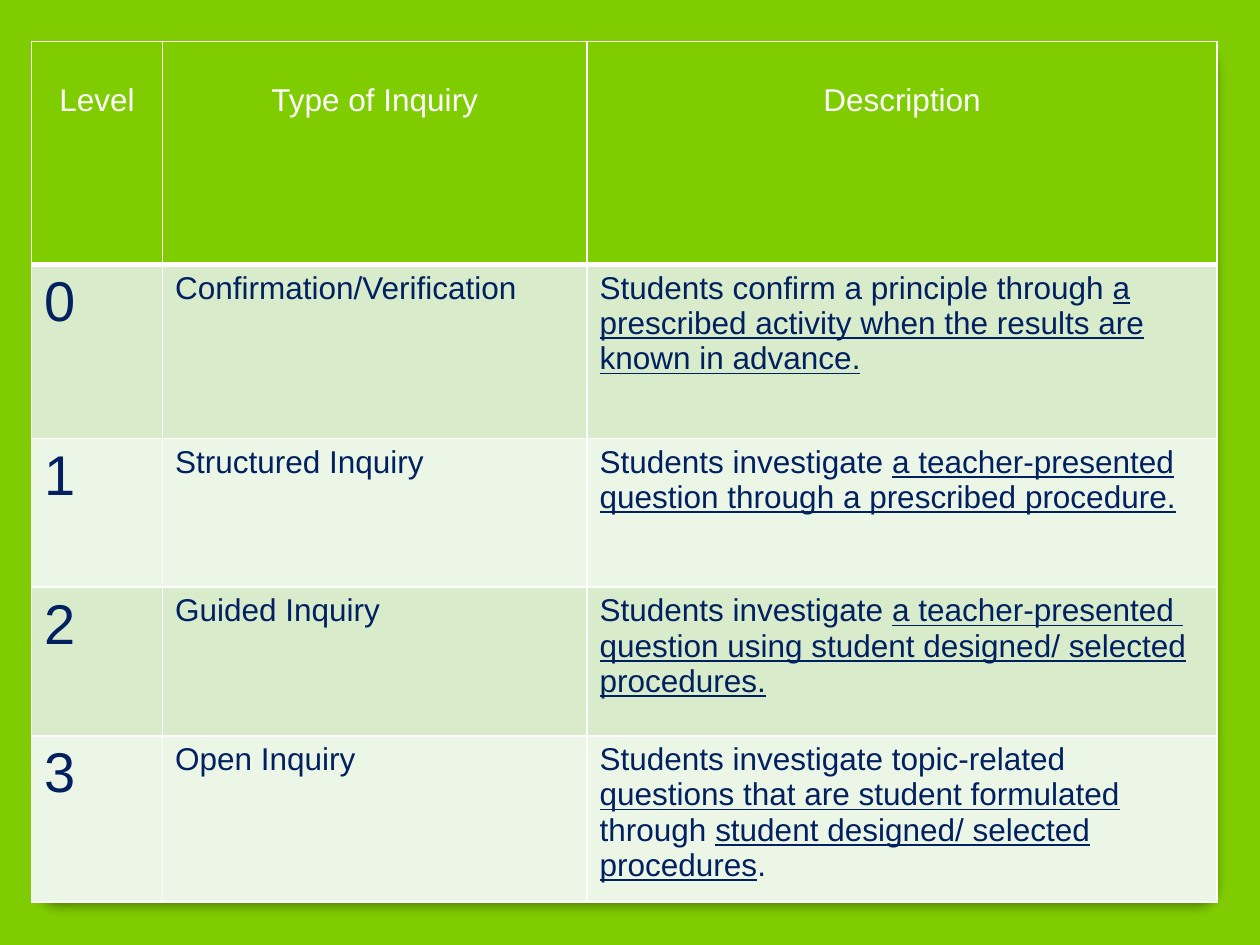
from lxml.etree import SubElement
from pptx import Presentation
from pptx.dml.color import RGBColor
from pptx.enum.shapes import MSO_SHAPE as Shape
from pptx.enum.text import PP_ALIGN as Align
from pptx.oxml.ns import qn
from pptx.util import Inches, Pt

COLORS = {
    "green": "7FCC00",
    "white": "FFFFFF",
    "edge": "A4A4A4",
    "shadow": "000000",
    "navy": "002060",
    "dark band": "D8ECCC",
    "light band": "ECF6E7",
}
FONT = "Arial"
COLUMN_WIDTHS = [1.04, 3.37, 5]
ROW_HEIGHTS = [1.77, 1.38, 1.18, 1.18, 1.32]
HEADINGS = ["Level", "Type of Inquiry", "Description"]
LEVELS = [
    ("Confirmation/Verification",
     ["Students confirm a principle through ",
      "a prescribed activity when the results are known in advance."]),
    ("Structured Inquiry",
     ["Students investigate ",
      "a teacher-presented question through a prescribed procedure."]),
    ("Guided Inquiry",
     ["Students investigate ",
      "a teacher-presented  question using student designed/ selected procedures."]),
    ("Open Inquiry",
     ["Students investigate topic-related ",
      "questions that are student formulated",
      " through ",
      "student designed/ selected procedures",
      "."]),
]


def color(name):
    """Return the named colour."""
    return RGBColor.from_string(COLORS[name])


def add_solid_fill(parent, name):
    """Append a solid fill element and return its colour element."""
    fill = SubElement(parent, qn("a:solidFill"))
    return SubElement(fill, qn("a:srgbClr"), val=COLORS[name])


def add_panel(slide, left, top, width, height):
    """Place the white rounded panel whose shadow frames the table."""
    panel = slide.shapes.add_shape(Shape.ROUNDED_RECTANGLE, Inches(left), Inches(top),
                                   Inches(width), Inches(height))
    panel.adjustments[0] = 0.02
    panel.fill.solid()
    panel.fill.fore_color.rgb = color("white")
    panel.line.color.rgb = color("edge")
    panel.line.width = Pt(0.16)
    panel.shadow.inherit = False
    effects = panel.element.spPr.find(qn("a:effectLst"))
    shadow = SubElement(effects, qn("a:outerShdw"), blurRad=str(Pt(6)), dist=str(Pt(4)),
                        dir="5400000", algn="ctr", rotWithShape="0")
    shadow_color = SubElement(shadow, qn("a:srgbClr"), val=COLORS["shadow"])
    SubElement(shadow_color, qn("a:alpha"), val="40000")


def format_cell(cell, fill, bottom=1):
    """Give a cell its white borders and its fill."""
    properties = cell._tc.get_or_add_tcPr()
    for side, width in {"L": 1, "R": 1, "T": 1, "B": bottom}.items():
        border = SubElement(properties, qn(f"a:ln{side}"), w=str(Pt(width)))
        add_solid_fill(border, "white")
    cell.fill.solid()
    cell.fill.fore_color.rgb = color(fill)


def write_cell(cell, segments, size, font_color):
    """Write segments as runs, underlining every second one."""
    paragraph = cell.text_frame.paragraphs[0]
    for index, segment in enumerate(segments):
        run = paragraph.add_run()
        run.text = segment
        run.font.name = FONT
        run.font.size = Pt(size)
        run.font.color.rgb = color(font_color)
        run.font.underline = index % 2 == 1
    return paragraph


def add_inquiry_table(slide, left, top):
    """Place the table of inquiry levels."""
    frame = slide.shapes.add_table(len(ROW_HEIGHTS), len(COLUMN_WIDTHS), Inches(left), Inches(top),
                                   Inches(sum(COLUMN_WIDTHS)), Inches(sum(ROW_HEIGHTS)))
    table = frame.table
    table.horz_banding = False
    for column, width in zip(table.columns, COLUMN_WIDTHS):
        column.width = Inches(width)
    for row, height in zip(table.rows, ROW_HEIGHTS):
        row.height = Inches(height)
    for cell, heading in zip(table.rows[0].cells, HEADINGS):
        format_cell(cell, "green", bottom=3)
        cell.margin_top = Inches(0.33)
        paragraph = write_cell(cell, [heading], 18, "white")
        paragraph.alignment = Align.CENTER
        paragraph.runs[0].font.bold = False
    for level, (kind, description) in enumerate(LEVELS):
        contents = [([str(level)], 32), ([kind], 18), (description, 18)]
        for cell, (segments, size) in zip(table.rows[level + 1].cells, contents):
            format_cell(cell, "light band" if level % 2 else "dark band")
            write_cell(cell, segments, size, "navy")


def main():
    """Build and save the slide."""
    presentation = Presentation()
    presentation.slide_width = Inches(10)
    presentation.slide_height = Inches(7.5)
    slide = presentation.slides.add_slide(presentation.slide_layouts[6])
    slide.background.fill.solid()
    slide.background.fill.fore_color.rgb = color("green")
    add_panel(slide, 0.33, 0.36, 9.33, 6.78)
    add_inquiry_table(slide, 0.25, 0.33)
    presentation.save("out.pptx")


if __name__ == "__main__":
    main()
